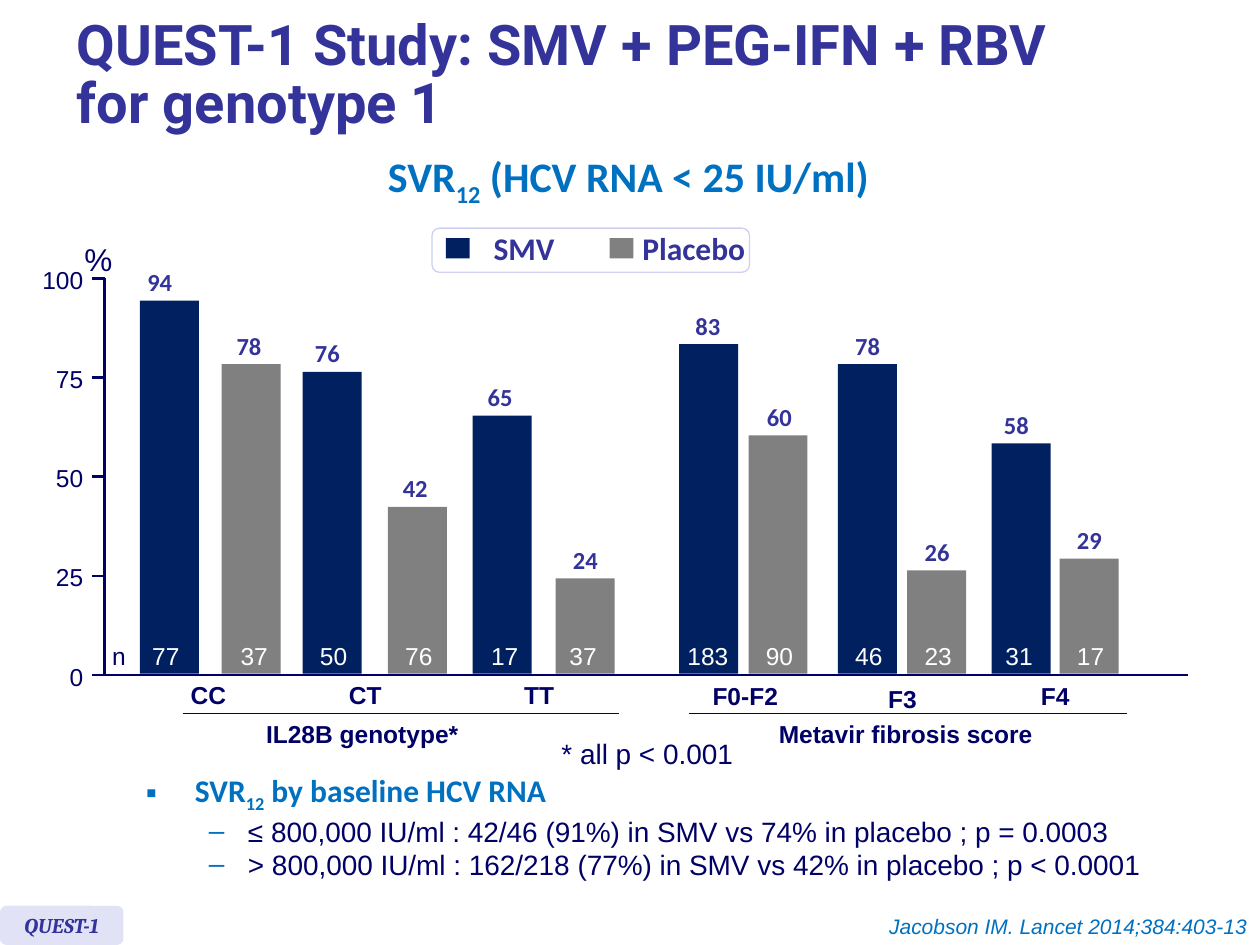
from lxml import etree
from pptx import Presentation
from pptx.dml.color import RGBColor
from pptx.enum.shapes import MSO_CONNECTOR, MSO_SHAPE
from pptx.enum.text import MSO_ANCHOR, PP_ALIGN
from pptx.oxml.ns import qn
from pptx.util import Cm, Pt

COLORS = {
    "navy": "000066", "indigo": "333399", "blue": "0070C0", "white": "FFFFFF",
    "smv": "002060", "placebo": "808080", "badge": "E2E2F6", "border": "D0D0F0",
}
FORMATS = {
    "title": ({"name": "Roboto", "size": Pt(32), "bold": True}, "indigo"),
    "heading": ({"name": "Calibri", "size": Pt(24), "bold": True}, "blue"),
    "percent": ({"name": "Arial", "size": Pt(18)}, "navy"),
    "axis": ({"name": "Arial", "size": Pt(14)}, "navy"),
    "category": ({"name": "Arial", "size": Pt(14), "bold": True}, "navy"),
    "value": ({"name": "Calibri", "size": Pt(14), "bold": True}, "indigo"),
    "count": ({"name": "Arial", "size": Pt(14)}, "white"),
    "legend": ({"name": "Calibri", "size": Pt(18), "bold": True}, "indigo"),
    "bullet": ({"name": "Calibri", "size": Pt(18), "bold": True}, "blue"),
    "detail": ({"name": "Arial", "size": Pt(16), "bold": False}, "navy"),
    "badge": ({"name": "Cambria", "size": Pt(12), "bold": True, "italic": True}, "indigo"),
    "citation": ({"name": "Arial", "size": Pt(12), "italic": True}, "blue"),
}
LEFT, CENTER, RIGHT = PP_ALIGN.LEFT, PP_ALIGN.CENTER, PP_ALIGN.RIGHT
MIDDLE = MSO_ANCHOR.MIDDLE

AXIS_LEFT, AXIS_BOTTOM, BAR_BOTTOM = 2.11, 13.61, 13.58
CM_PER_PERCENT, BAR_WIDTH = 0.08, 1.19

# percent, patients, left of bar, left of percent, left of patients
BARS = [
    (94, 77, 2.82, 2.72, 2.82), (78, 37, 4.47, 4.52, 4.6),
    (76, 50, 6.1, 6.1, 6.2), (42, 76, 7.82, 7.87, 7.92),
    (65, 17, 9.53, 9.58, 9.65), (24, 37, 11.2, 11.3, 11.23),
    (83, 183, 13.69, 13.77, 13.61), (60, 90, 15.09, 15.21, 15.19),
    (78, 46, 16.89, 16.99, 16.99), (26, 23, 18.29, 18.39, 18.39),
    (58, 31, 19.99, 19.99, 20.02), (29, 17, 21.36, 21.46, 21.46),
]
CATEGORIES = [
    ("CC", 3.58, 13.59, 1.24), ("CT", 6.78, 13.59, 1.17), ("TT", 10.31, 13.59, 1.12),
    ("F0-F2", 14.1, 13.61, 1.85), ("F3", 17.65, 13.67, 1.09), ("F4", 20.73, 13.61, 1.09),
    ("IL28B genotype*", 5.11, 14.38, 4.39), ("Metavir fibrosis score", 15.44, 14.38, 5.64),
]
DETAILS = [
    "≤ 800,000 IU/ml : 42/46 (91%) in SMV vs 74% in placebo ; p = 0.0003",
    "> 800,000 IU/ml : 162/218 (77%) in SMV vs 42% in placebo ; p < 0.0001",
]


def color(name):
    return RGBColor.from_string(COLORS[name])


def add_run(paragraph, text, style, baseline=None):
    run = paragraph.add_run()
    run.text = text
    values, color_name = FORMATS[style]
    for name, value in values.items():
        setattr(run.font, name, value)
    run.font.color.rgb = color(color_name)
    if baseline:
        run.font._element.set("baseline", str(baseline))


def add_subscripted(paragraph, base, subscript, rest, style):
    add_run(paragraph, base, style)
    add_run(paragraph, subscript, style, -25000)
    add_run(paragraph, rest, style)


def add_text(slide, box, text, style, align=LEFT, anchor=MSO_ANCHOR.TOP, wrap=False, inset=None):
    shape = slide.shapes.add_textbox(*(Cm(length) for length in box))
    frame = shape.text_frame
    frame.word_wrap = wrap
    frame.vertical_anchor = anchor
    if inset is not None:
        for side in ("left", "top", "right", "bottom"):
            setattr(frame, f"margin_{side}", Cm(inset))
    paragraph = frame.paragraphs[0]
    paragraph.alignment = align
    if text:
        add_run(paragraph, text, style)
    return frame


def add_block(slide, box, fill, kind=MSO_SHAPE.RECTANGLE, border=None):
    shape = slide.shapes.add_shape(kind, *(Cm(length) for length in box))
    shape.shadow.inherit = False
    shape.fill.solid()
    shape.fill.fore_color.rgb = color(fill)
    if border:
        shape.line.color.rgb = color(border)
        shape.line.width = Pt(0.75)
    else:
        shape.line.fill.background()
    return shape


def add_line(slide, start, end, width):
    points = (Cm(length) for length in (*start, *end))
    line = slide.shapes.add_connector(MSO_CONNECTOR.STRAIGHT, *points)
    line.line.color.rgb = color("navy")
    line.line.width = Pt(width)
    etree.SubElement(line._element.spPr, qn("a:effectLst"))


def set_bullet(paragraph, character, left, hanging):
    properties = paragraph._p.get_or_add_pPr()
    properties.set("marL", str(Cm(left)))
    properties.set("indent", str(-Cm(hanging)))
    bullet_color = etree.SubElement(properties, qn("a:buClr"))
    etree.SubElement(bullet_color, qn("a:srgbClr"), val=COLORS["blue"])
    etree.SubElement(properties, qn("a:buFont"), typeface="Arial")
    etree.SubElement(properties, qn("a:buChar"), char=character)


def add_headings(slide):
    title = add_text(slide, (1.3, 0.2, 23.19, 2.72), "QUEST-1 Study: SMV + PEG-IFN + RBV",
                     "title", anchor=MIDDLE, wrap=True).paragraphs[0]
    title.line_spacing = 0.85
    title.add_line_break()
    add_run(title, "for genotype 1", "title")
    heading = add_text(slide, (7.26, 3.53, 10.82, 0.89), "", "heading", CENTER, wrap=True)
    heading.paragraphs[0].line_spacing = Pt(15.2)
    add_subscripted(heading.paragraphs[0], "SVR", "12", " (HCV RNA < 25 IU/ml)", "heading")


def add_bars(slide):
    for index, (percent, patients, left, percent_left, patients_left) in enumerate(BARS):
        height = percent * CM_PER_PERCENT
        top = BAR_BOTTOM - height
        fill = "placebo" if index % 2 else "smv"
        add_block(slide, (left, top, BAR_WIDTH, height), fill)
        add_text(slide, (percent_left, top - 0.94, 1.02, 1.12), str(percent), "value",
                 anchor=MIDDLE, inset=0.25)
        count_width = 1.35 if patients > 99 else 1.07
        add_text(slide, (patients_left, 12.88, count_width, 0.69), str(patients), "count",
                 anchor=MIDDLE)


def add_axes(slide):
    for tick in range(0, 101, 25):
        y = AXIS_BOTTOM - tick * CM_PER_PERCENT
        end = 23.95 if tick == 0 else AXIS_LEFT
        add_line(slide, (1.85, y), (end, y), 1.5)
        add_text(slide, (0.84, y - 0.28, 0.84, 0.61), str(tick), "axis", RIGHT, MIDDLE, inset=0)
    add_line(slide, (AXIS_LEFT, AXIS_BOTTOM - 100 * CM_PER_PERCENT), (AXIS_LEFT, AXIS_BOTTOM), 1.5)
    add_text(slide, (1.45, 4.72, 1.07, 1.02), "%", "percent")
    add_text(slide, (2.01, 12.88, 0.79, 0.69), "n", "axis", anchor=MIDDLE)
    for text, left, top, width in CATEGORIES:
        add_text(slide, (left, top, width, 0.86), text, "category", CENTER)
    for start, end in ((3.68, 12.47), (13.89, 22.71)):
        add_line(slide, (start, 14.38), (end, 14.38), 0.75)


def add_legend(slide):
    add_block(slide, (8.71, 4.6, 6.4, 0.89), "white", MSO_SHAPE.ROUNDED_RECTANGLE, "border")
    for text, fill, key_left, text_left, width in (
            ("SMV", "smv", 8.99, 9.7, 1.75), ("Placebo", "placebo", 12.29, 12.7, 2.62)):
        add_block(slide, (key_left, 4.8, 0.48, 0.41), fill)
        add_text(slide, (text_left, 4.5, width, 1.02), text, "legend")


def add_findings(slide):
    add_text(slide, (11.07, 14.73, 4.01, 0.94), "* all p < 0.001", "detail")
    frame = add_text(slide, (2.69, 15.42, 21.01, 2.39), "", "bullet")
    set_bullet(frame.paragraphs[0], "▪", 0.99, 0.99)
    add_subscripted(frame.paragraphs[0], "SVR", "12", " by baseline HCV RNA", "bullet")
    for text in DETAILS:
        paragraph = frame.add_paragraph()
        paragraph.level = 1
        set_bullet(paragraph, "–", 2.06, 0.79)
        add_run(paragraph, text, "detail")


def add_footer(slide):
    badge = add_block(slide, (0, 18.26, 2.49, 0.79), "badge", MSO_SHAPE.ROUNDED_RECTANGLE)
    badge.text_frame.word_wrap = False
    badge.text_frame.vertical_anchor = MIDDLE
    badge.text_frame.paragraphs[0].alignment = CENTER
    add_run(badge.text_frame.paragraphs[0], "QUEST-1", "badge")
    add_text(slide, (17.63, 18.29, 7.77, 0.76), "Jacobson IM. Lancet 2014;384:403-13",
             "citation", RIGHT)


def main():
    presentation = Presentation()
    presentation.slide_width, presentation.slide_height = Cm(25.4), Cm(19.05)
    slide = presentation.slides.add_slide(presentation.slide_layouts[6])
    for add_part in (add_headings, add_bars, add_axes, add_legend, add_findings, add_footer):
        add_part(slide)
    presentation.save("out.pptx")


if __name__ == "__main__":
    main()
